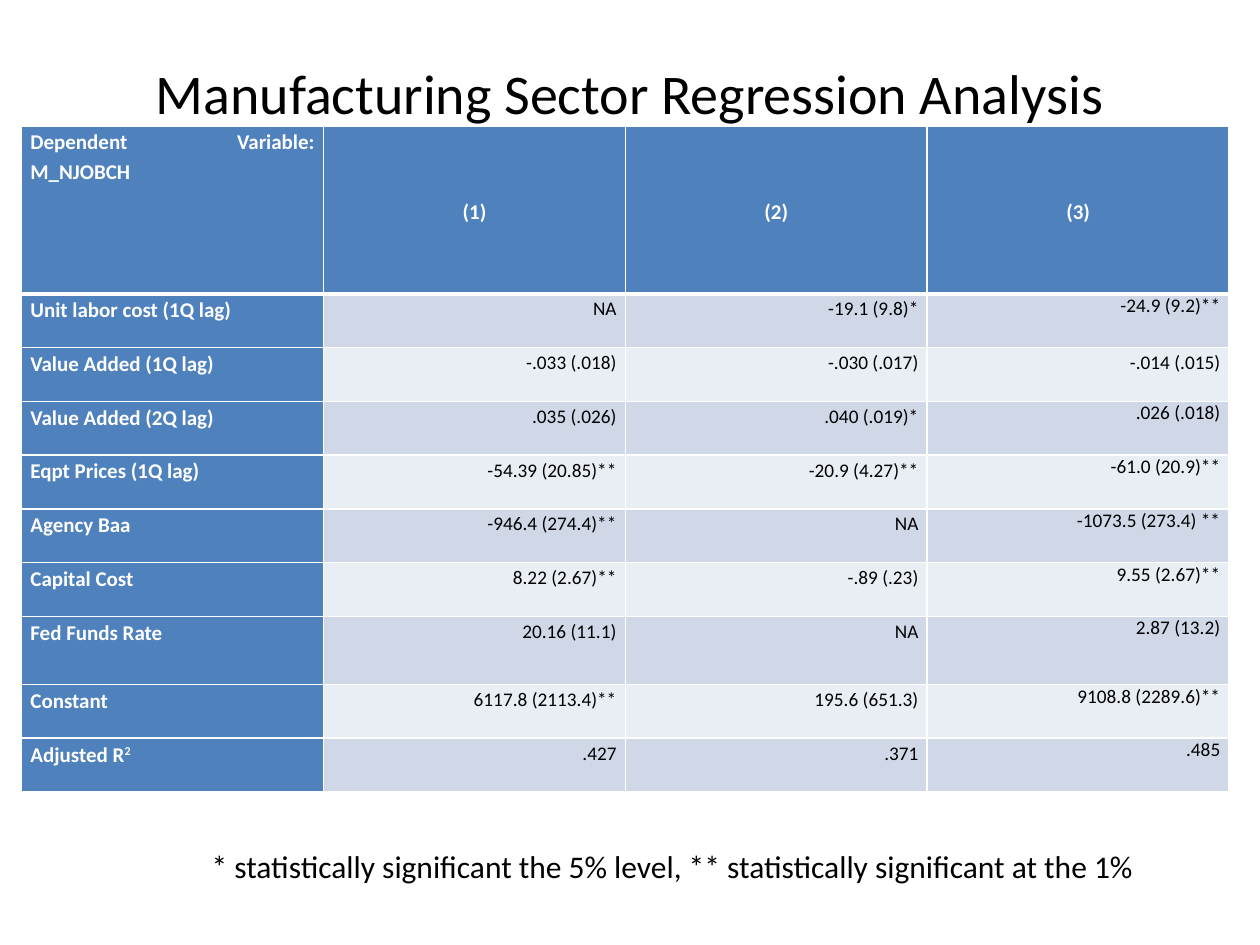
import dataclasses

import lxml.etree
import pptx
import pptx.dml.color
import pptx.enum.text
import pptx.oxml.ns
import pptx.util

Pt = pptx.util.Pt
ALIGN = pptx.enum.text.PP_ALIGN
ANCHOR = pptx.enum.text.MSO_ANCHOR


@dataclasses.dataclass(frozen=True)
class Theme:
    font: str = "Calibri"
    text: str = "000000"
    inverse: str = "FFFFFF"
    header: str = "4F81BD"
    bands: tuple = ("D0D8E8", "E9EDF4")
    title_size: float = 32
    note_size: float = 18
    label_size: float = 12
    value_size: float = 11
    line_spacing: float = 1.15


HEADER = ("Dependent Variable:\vM_NJOBCH", "(1)", "(2)", "(3)")
ROWS = (
    ("Unit labor cost (1Q lag)", "NA", "-19.1 (9.8)*", "-24.9 (9.2)**"),
    ("Value Added (1Q lag)", "-.033 (.018)", "-.030 (.017)", "-.014 (.015)"),
    ("Value Added (2Q lag)", ".035 (.026)", ".040 (.019)*", ".026 (.018)"),
    ("Eqpt Prices (1Q lag)", "-54.39 (20.85)**", "-20.9 (4.27)**", "-61.0 (20.9)**"),
    ("Agency Baa", "-946.4 (274.4)**", "NA", "-1073.5 (273.4) **"),
    ("Capital Cost", "8.22 (2.67)**", "-.89 (.23)", "9.55 (2.67)**"),
    ("Fed Funds Rate", "20.16 (11.1)", "NA", "2.87 (13.2)"),
    ("Constant", "6117.8 (2113.4)**", "195.6 (651.3)", "9108.8 (2289.6)**"),
    ("Adjusted R", ".427", ".371", ".485"),
)
HEADER_HEIGHT, ROW_HEIGHT, TALL_HEIGHT = 96, 30.7, 39
TALL_ROW = "Fed Funds Rate"
SPACED_ROW = "Value Added (1Q lag)"  # the only row with a spaced last column


class SlideBuilder:
    def __init__(self, prs, theme):
        self.theme = theme
        self.slide = prs.slides.add_slide(prs.slide_layouts[5])

    def style(self, p, size, color, bold=False, align=None):
        p.alignment = align
        p.font.name = self.theme.font
        p.font.size = Pt(size)
        p.font.bold = bold
        p.font.color.rgb = pptx.dml.color.RGBColor.from_string(color)

    def title(self, text, left, top, width, height):
        sp = self.slide.shapes.title
        sp.left, sp.top, sp.width, sp.height = map(Pt, (left, top, width, height))
        tf = sp.text_frame
        tf.text = text
        tf.vertical_anchor = ANCHOR.MIDDLE
        self.style(tf.paragraphs[0], self.theme.title_size, self.theme.text,
                   align=ALIGN.CENTER)

    def note(self, text, left, top, width, height):
        sp = self.slide.shapes.add_textbox(*map(Pt, (left, top, width, height)))
        tf = sp.text_frame
        tf.word_wrap = False
        tf.auto_size = pptx.enum.text.MSO_AUTO_SIZE.SHAPE_TO_FIT_TEXT
        tf.text = text
        self.style(tf.paragraphs[0], self.theme.note_size, self.theme.text)

    def table(self, rows, heights, left, top, width):
        """Add a table with equal columns, a header row and a label column."""
        columns = len(rows[0])
        tbl = self.slide.shapes.add_table(
            len(rows), columns, Pt(left), Pt(top), Pt(width), Pt(sum(heights))).table
        for column in tbl.columns:
            column.width = Pt(width / columns)
        for i, (row, height) in enumerate(zip(rows, heights)):
            tbl.rows[i].height = Pt(height)
            for j, text in enumerate(row):
                self.cell(tbl.cell(i, j), text, i, j)
                if j == columns - 1 and i and row[0] != SPACED_ROW:
                    tbl.cell(i, j).text_frame.paragraphs[0].line_spacing = 1.0
        return tbl

    def cell(self, cell, text, i, j):
        th = self.theme
        is_label = i == 0 or j == 0
        cell.margin_left = cell.margin_right = Pt(5)
        cell.margin_top = cell.margin_bottom = 0
        cell.vertical_anchor = ANCHOR.MIDDLE if i == 0 and j else ANCHOR.TOP
        cell.text = text
        p = cell.text_frame.paragraphs[0]
        p.line_spacing = th.line_spacing
        align = ALIGN.JUSTIFY if j == 0 else ALIGN.CENTER if i == 0 else ALIGN.RIGHT
        if is_label:
            self.style(p, th.label_size, th.inverse, True, align)
        else:
            self.style(p, th.value_size, th.text, False, align)
        fill = th.header if is_label else th.bands[(i - 1) % 2]
        self.borders(cell, top=3 if i == 1 else 1, bottom=3 if i == 0 else 1)
        cell.fill.solid()
        cell.fill.fore_color.rgb = pptx.dml.color.RGBColor.from_string(fill)

    def borders(self, cell, top, bottom):
        qn = pptx.oxml.ns.qn
        tcPr = cell._tc.get_or_add_tcPr()
        for side, weight in (("L", 1), ("R", 1), ("T", top), ("B", bottom)):
            ln = lxml.etree.SubElement(tcPr, qn(f"a:ln{side}"), w=str(Pt(weight)))
            solid = lxml.etree.SubElement(ln, qn("a:solidFill"))
            lxml.etree.SubElement(solid, qn("a:srgbClr"), val=self.theme.inverse)

    def superscript(self, cell, text):
        r = cell.text_frame.paragraphs[0].add_run()
        r.text = text
        r._r.get_or_add_rPr().set("baseline", "30000")


def main():
    prs = pptx.Presentation()
    prs.slide_width, prs.slide_height = Pt(720), Pt(540)
    s = SlideBuilder(prs, Theme())
    s.title("Manufacturing Sector Regression Analysis", 36, 21.6, 648, 62.6)
    heights = [HEADER_HEIGHT] + [
        TALL_HEIGHT if row[0] == TALL_ROW else ROW_HEIGHT for row in ROWS]
    tbl = s.table((HEADER,) + ROWS, heights, 12.4, 72, 690)
    s.superscript(tbl.cell(len(ROWS), 0), "2")
    s.note("* statistically significant the 5% level, "
           "** statistically significant at the 1%", 113.8, 480.2, 548, 29)
    prs.save("out.pptx")


if __name__ == "__main__":
    main()
